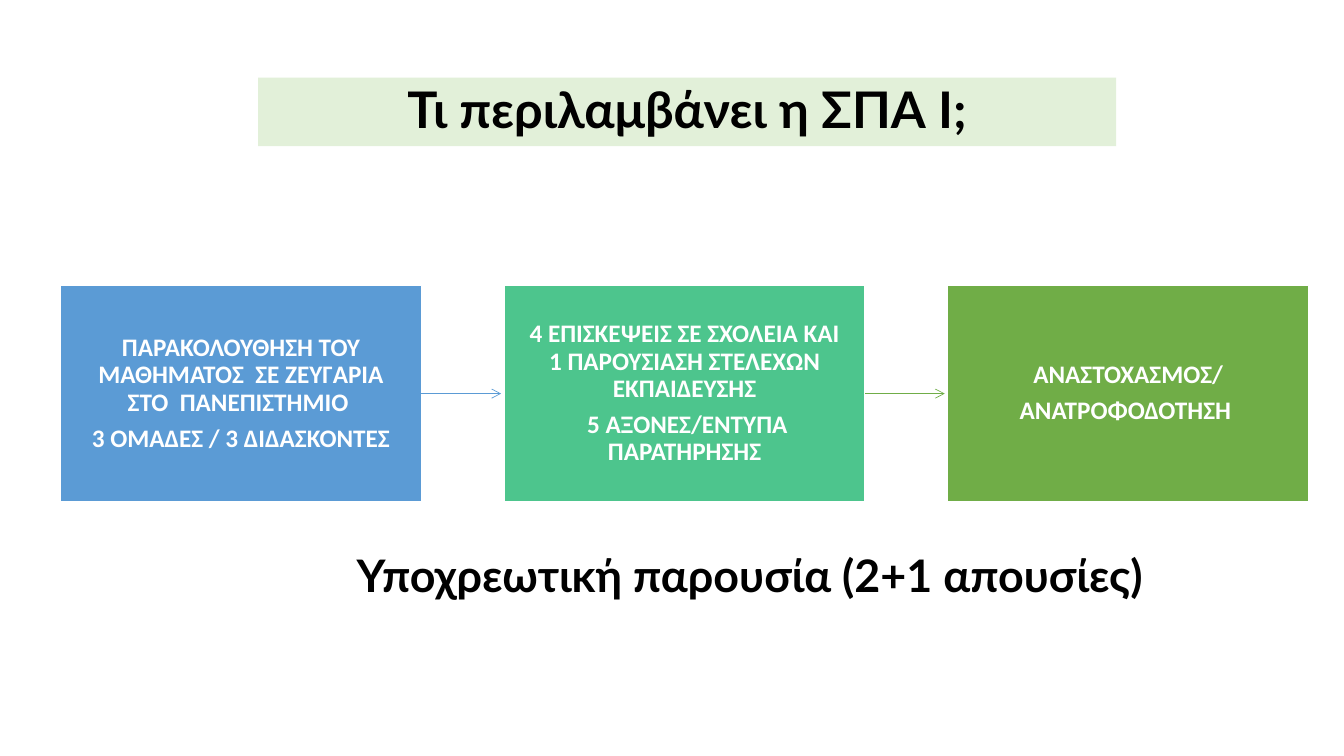
import pptx
import pptx.util
import pptx.dml.color
import pptx.enum.shapes
import pptx.enum.text
import pptx.oxml
import pptx.oxml.ns

Inches, Pt = pptx.util.Inches, pptx.util.Pt
ALIGN = pptx.enum.text.PP_ALIGN
MIDDLE = pptx.enum.text.MSO_ANCHOR.MIDDLE

COLORS = {"blue": "5B9BD5", "teal": "4DC58D", "green": "70AD47",
          "pale": "E2F0D9", "white": "FFFFFF", "black": "000000"}

WIDE, HIGH = 13.33, 7.5
LEFT, TOP = 0.6, 2.83       # first step
STEP_W, STEP_H = 3.58, 2.15
PITCH = 4.4                 # from one step to the next
REACH = 0.79                # arrow length

STEPS = [
    ("blue", ["ΠΑΡΑΚΟΛΟΥΘΗΣΗ ΤΟΥ ΜΑΘΗΜΑΤΟΣ  ΣΕ ΖΕΥΓΑΡΙΑ ΣΤΟ  ΠΑΝΕΠΙΣΤΗΜΙΟ ",
              "3 ΟΜΑΔΕΣ / 3 ΔΙΔΑΣΚΟΝΤΕΣ"]),
    ("teal", ["4 ΕΠΙΣΚΕΨΕΙΣ ΣΕ ΣΧΟΛΕΙΑ ΚΑΙ 1 ΠΑΡΟΥΣΙΑΣΗ ΣΤΕΛΕΧΩΝ ΕΚΠΑΙΔΕΥΣΗΣ",
              " 5 ΑΞΟΝΕΣ/ΕΝΤΥΠΑ ΠΑΡΑΤΗΡΗΣΗΣ"]),
    ("green", ["ΑΝΑΣΤΟΧΑΣΜΟΣ/", "ΑΝΑΤΡΟΦΟΔΟΤΗΣΗ "]),
]
ARROWS = ["blue", "green"]


def rgb(name):
    return pptx.dml.color.RGBColor.from_string(COLORS[name])


def write(frame, lines, font, size, color, align, spacing=1.0, after=0):
    frame.word_wrap = True
    for i, line in enumerate(lines):
        para = frame.add_paragraph() if i else frame.paragraphs[0]
        para.text = line
        para.alignment = align
        para.line_spacing = spacing
        para.space_after = Pt(after)
        para.font.name = font
        para.font.size = Pt(size)
        para.font.bold = True
        para.font.color.rgb = rgb(color)


def add_label(slide, text, box, size, align, spacing=1.0, fill=None):
    label = slide.shapes.add_textbox(*map(Inches, box))
    if fill:
        label.fill.solid()
        label.fill.fore_color.rgb = rgb(fill)
        label.text_frame.vertical_anchor = MIDDLE
    write(label.text_frame, [text], "Lato", size, "black", align, spacing)


def add_step(slide, col, color, lines):
    step = slide.shapes.add_shape(
        pptx.enum.shapes.MSO_SHAPE.RECTANGLE, Inches(LEFT + col * PITCH),
        Inches(TOP), Inches(STEP_W), Inches(STEP_H))
    step.shadow.inherit = False
    step.fill.solid()
    step.fill.fore_color.rgb = rgb(color)
    step.line.color.rgb = rgb("white")
    step.line.width = Pt(1)
    frame = step.text_frame
    frame.vertical_anchor = MIDDLE
    frame.margin_left = frame.margin_right = Inches(0.18)
    frame.margin_top = frame.margin_bottom = Inches(0.18)
    write(frame, lines, "Calibri", 18, "white", ALIGN.CENTER, 0.9, 6.3)
    return step


def add_arrow(slide, step, color):
    """Draw an arrow from a step's right side, ending just before the next."""
    x, y = step.left + step.width, step.top + step.height // 2
    arrow = slide.shapes.add_connector(
        pptx.enum.shapes.MSO_CONNECTOR.STRAIGHT, x, y, x + Inches(REACH), y)
    arrow.begin_connect(step, 3)
    arrow.line.color.rgb = rgb(color)
    arrow.line.width = Pt(0.5)
    props = arrow._element.spPr
    space = pptx.oxml.ns.nsdecls("a")
    arrow.line._get_or_add_ln().append(
        pptx.oxml.parse_xml(f'<a:tailEnd {space} type="arrow"/>'))
    props.append(pptx.oxml.parse_xml(f"<a:effectLst {space}/>"))


def main():
    deck = pptx.Presentation()
    deck.slide_width, deck.slide_height = Inches(WIDE), Inches(HIGH)
    slide = deck.slides.add_slide(deck.slide_layouts[6])
    add_label(slide, "Τι περιλαμβάνει η ΣΠΑ Ι;", (2.56, 0.77, 8.51, 0.68),
              36, ALIGN.CENTER, 0.9, "pale")
    steps = [add_step(slide, col, *step) for col, step in enumerate(STEPS)]
    for step, color in zip(steps, ARROWS):
        add_arrow(slide, step, color)
    add_label(slide, "Υποχρεωτική παρουσία (2+1 απουσίες)",
              (3.44, 5.38, 8.74, 0.64), 32, ALIGN.LEFT)
    deck.save("out.pptx")


if __name__ == "__main__":
    main()
